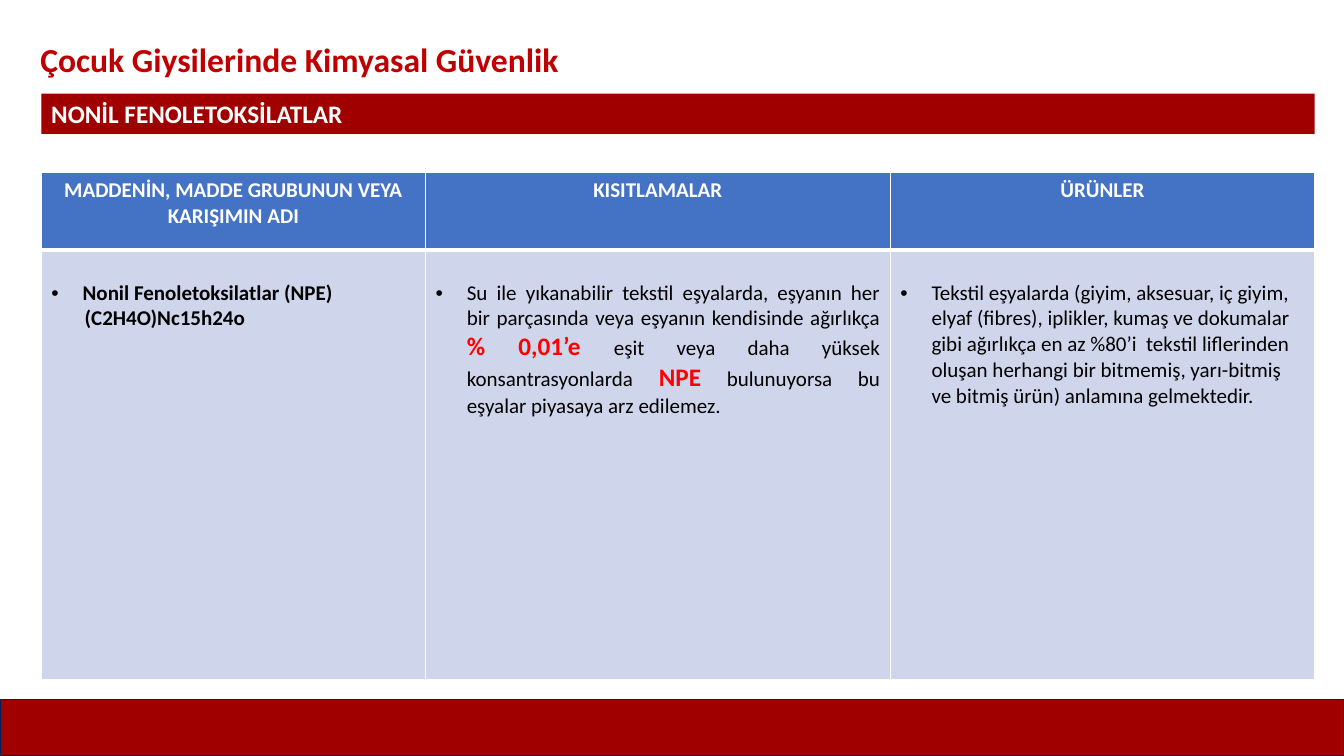
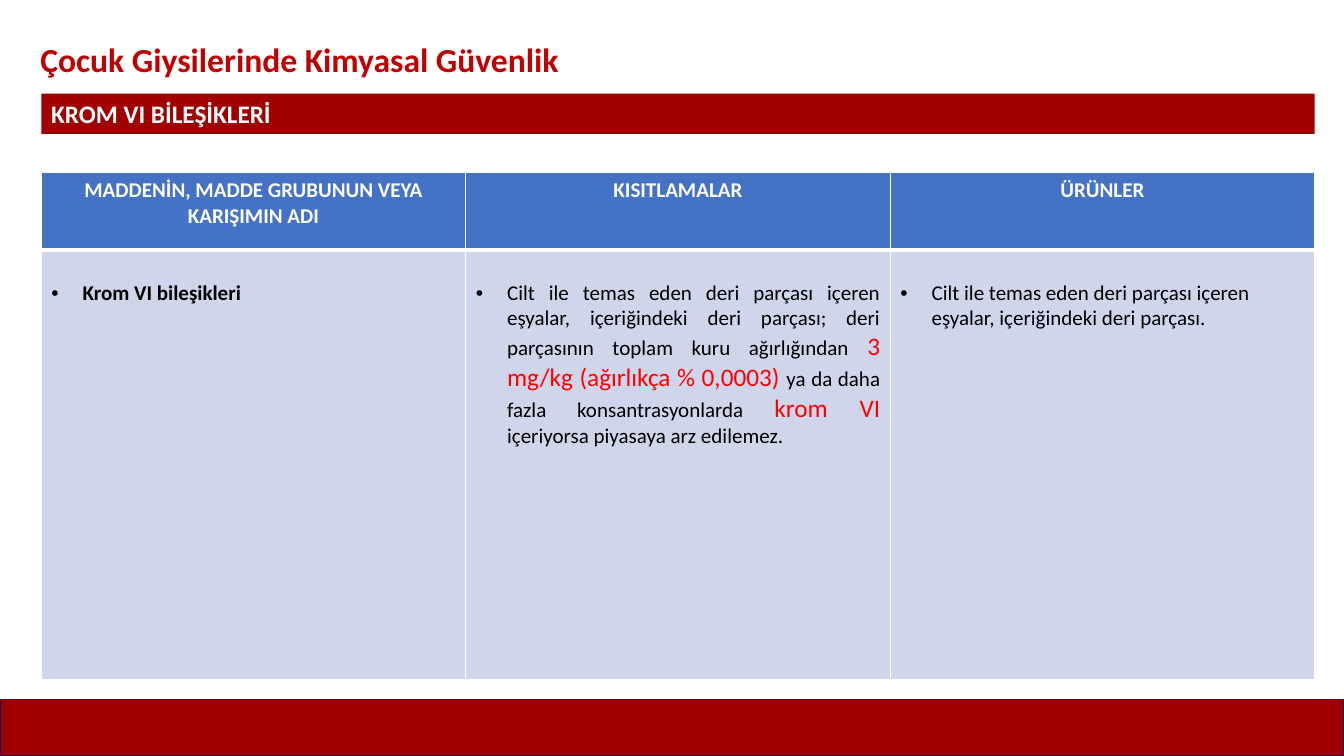
import pptx
import pptx.dml.color
import pptx.enum.shapes
import pptx.enum.text
import pptx.oxml.ns
import pptx.util
from lxml import etree

Inches = pptx.util.Inches
ALIGN = pptx.enum.text.PP_ALIGN
FONT = "Calibri"
RED, TITLE_RED, ALERT, NAVY = "A00000", "C00000", "FF0000", "002060"
BLUE, PALE, WHITE, BLACK = "4472C4", "CFD5EA", "FFFFFF", "000000"
LEFT, WIDTH = 0.41, 12.63
ROW_HEIGHTS = [0.77, 4.26]
TITLE = "Çocuk Giysilerinde Kimyasal Güvenlik"
HEADINGS = ["MADDENİN, MADDE GRUBUNUN VEYA KARIŞIMIN ADI", "KISITLAMALAR", "ÜRÜNLER"]
HEADING = {"size": 15, "bold": True, "color": WHITE}
BODY = {"size": 15, "bold": False, "color": BLACK}
NAME = {**BODY, "bold": True}
LIMIT = {"size": 18, "bold": False, "color": ALERT}
STRONG_LIMIT = {**LIMIT, "bold": True}

TOPICS = [
    {
        "band": "NONİL FENOLETOKSİLATLAR",
        "columns": [3.81, 4.61, 4.21],
        "name": [("Nonil Fenoletoksilatlar (NPE)", NAME)],
        "formula": [("(C2H4O)Nc15h24o", NAME)],
        "limits": [
            ("Su ile yıkanabilir tekstil eşyalarda, eşyanın her bir parçasında veya "
             "eşyanın kendisinde ağırlıkça ", BODY),
            ("% 0,01’e ", STRONG_LIMIT),
            ("eşit veya daha yüksek konsantrasyonlarda ", BODY),
            ("NPE", STRONG_LIMIT),
            (" bulunuyorsa bu eşyalar piyasaya arz edilemez.", BODY),
        ],
        "products": [
            ("Tekstil eşyalarda (giyim, aksesuar, iç giyim, elyaf (fibres), iplikler, "
             "kumaş ve dokumalar gibi ağırlıkça en az %80’i  tekstil liflerinden oluşan "
             "herhangi bir bitmemiş, yarı-bitmiş ve bitmiş ürün) anlamına gelmektedir.", BODY),
        ],
    },
    {
        "band": "KROM VI BİLEŞİKLERİ",
        "columns": [4.21, 4.21, 4.21],
        "name": [("Krom VI bileşikleri", NAME)],
        "formula": None,
        "limits": [
            ("Cilt ile temas eden deri parçası içeren eşyalar, içeriğindeki deri parçası; "
             "deri parçasının toplam kuru ağırlığından ", BODY),
            ("3 mg/kg (ağırlıkça % 0,0003) ", LIMIT),
            ("ya da daha fazla konsantrasyonlarda ", BODY),
            ("krom VI ", LIMIT),
            ("içeriyorsa piyasaya arz edilemez.", BODY),
        ],
        "products": [
            ("Cilt ile temas eden deri parçası içeren eşyalar, içeriğindeki deri parçası.", BODY),
        ],
    },
]


def rgb(value):
    """Return the colour for a hex string."""
    return pptx.dml.color.RGBColor.from_string(value)


def add_xml(parent, tag, **attributes):
    """Append a DrawingML element to a parent and return it."""
    return etree.SubElement(parent, pptx.oxml.ns.qn(tag), attributes)


def write_runs(paragraph, runs, align=ALIGN.LEFT):
    """Write formatted runs into an aligned paragraph."""
    paragraph.alignment = align
    for text, style in runs:
        run = paragraph.add_run()
        run.text = text
        run.font.color.rgb = rgb(style["color"])
        formats = {"name": FONT, "size": pptx.util.Pt(style["size"]), "bold": style["bold"]}
        for attribute, value in formats.items():
            setattr(run.font, attribute, value)


def indent(paragraph, margin, bullet=False):
    """Indent a paragraph, hanging it from a bullet when asked."""
    properties = paragraph._p.get_or_add_pPr()
    properties.set("marL", str(Inches(margin)))
    properties.set("indent", str(-Inches(margin) if bullet else 0))
    if bullet:
        add_xml(properties, "a:buFont", typeface="Arial")
        add_xml(properties, "a:buChar", char="•")


def style_cell(cell, fill, borders):
    """Draw white borders of the given widths and fill the cell."""
    properties = cell._tc.get_or_add_tcPr()
    for side, points in borders.items():
        line = add_xml(properties, f"a:ln{side}", w=str(pptx.util.Pt(points)))
        add_xml(add_xml(line, "a:solidFill"), "a:srgbClr", val=WHITE)
    cell.fill.solid()
    cell.fill.fore_color.rgb = rgb(fill)


def add_bar(slide, left, top, width, height, outline=None):
    """Add a red rectangle and return it."""
    bar = slide.shapes.add_shape(
        pptx.enum.shapes.MSO_SHAPE.RECTANGLE,
        Inches(left), Inches(top), Inches(width), Inches(height))
    bar.shadow.inherit = False
    bar.fill.solid()
    bar.fill.fore_color.rgb = rgb(RED)
    if outline:
        bar.line.color.rgb = rgb(outline)
        bar.line.width = pptx.util.Pt(1)
    else:
        bar.line.fill.background()
    return bar


def add_footer(layout, slide):
    """Put the footer band behind everything on the shared layout."""
    footer = add_bar(slide, 0, 6.94, 13.33, 0.56, NAVY)
    layout.shapes.element.insert(2, footer.element)


def write_title(slide):
    """Place and format the title placeholder."""
    title = slide.shapes.title
    box = {"left": 0.3, "top": 0.34, "width": 12.29, "height": 0.5}
    for attribute, value in box.items():
        setattr(title, attribute, Inches(value))
    frame = title.text_frame
    frame.auto_size = pptx.enum.text.MSO_AUTO_SIZE.NONE
    frame.vertical_anchor = pptx.enum.text.MSO_ANCHOR.TOP
    write_runs(frame.paragraphs[0], [(TITLE, {"size": 24, "bold": True, "color": TITLE_RED})])


def add_band(slide, text):
    """Add the band that names the substance."""
    band = add_bar(slide, LEFT, 0.93, WIDTH, 0.4)
    style = {"size": 18, "bold": True, "color": WHITE}
    write_runs(band.text_frame.paragraphs[0], [(text, style)], ALIGN.JUSTIFY)


def add_restrictions(slide, topic):
    """Add the table of substance, limits and products."""
    table = slide.shapes.add_table(
        2, 3, Inches(LEFT), Inches(1.71), Inches(WIDTH), Inches(sum(ROW_HEIGHTS))).table
    for row, height in zip(table.rows, ROW_HEIGHTS):
        row.height = Inches(height)
    aligns = [ALIGN.LEFT, ALIGN.JUSTIFY, ALIGN.LEFT]
    entries = [topic["name"], topic["limits"], topic["products"]]
    for index, width in enumerate(topic["columns"]):
        table.columns[index].width = Inches(width)
        heading, body = table.cell(0, index), table.cell(1, index)
        style_cell(heading, BLUE, {"L": 1, "R": 1, "T": 1, "B": 3})
        write_runs(heading.text_frame.paragraphs[0], [(HEADINGS[index], HEADING)], ALIGN.CENTER)
        style_cell(body, PALE, {"L": 1, "R": 1, "T": 3, "B": 1})
        body.margin_top = Inches(0.3)
        entry = body.text_frame.paragraphs[0]
        indent(entry, 0.31, bullet=True)
        write_runs(entry, entries[index], aligns[index])
    if topic["formula"]:
        formula = table.cell(1, 0).text_frame.add_paragraph()
        indent(formula, 0.33)
        write_runs(formula, topic["formula"])


def main():
    """Build and save the presentation."""
    presentation = pptx.Presentation()
    presentation.slide_width = Inches(13.33)
    presentation.slide_height = Inches(7.5)
    layout = presentation.slide_layouts[5]
    slides = [presentation.slides.add_slide(layout) for _ in TOPICS]
    add_footer(layout, slides[0])
    for slide, topic in zip(slides, TOPICS):
        add_band(slide, topic["band"])
        write_title(slide)
        add_restrictions(slide, topic)
    presentation.save("out.pptx")


if __name__ == "__main__":
    main()
